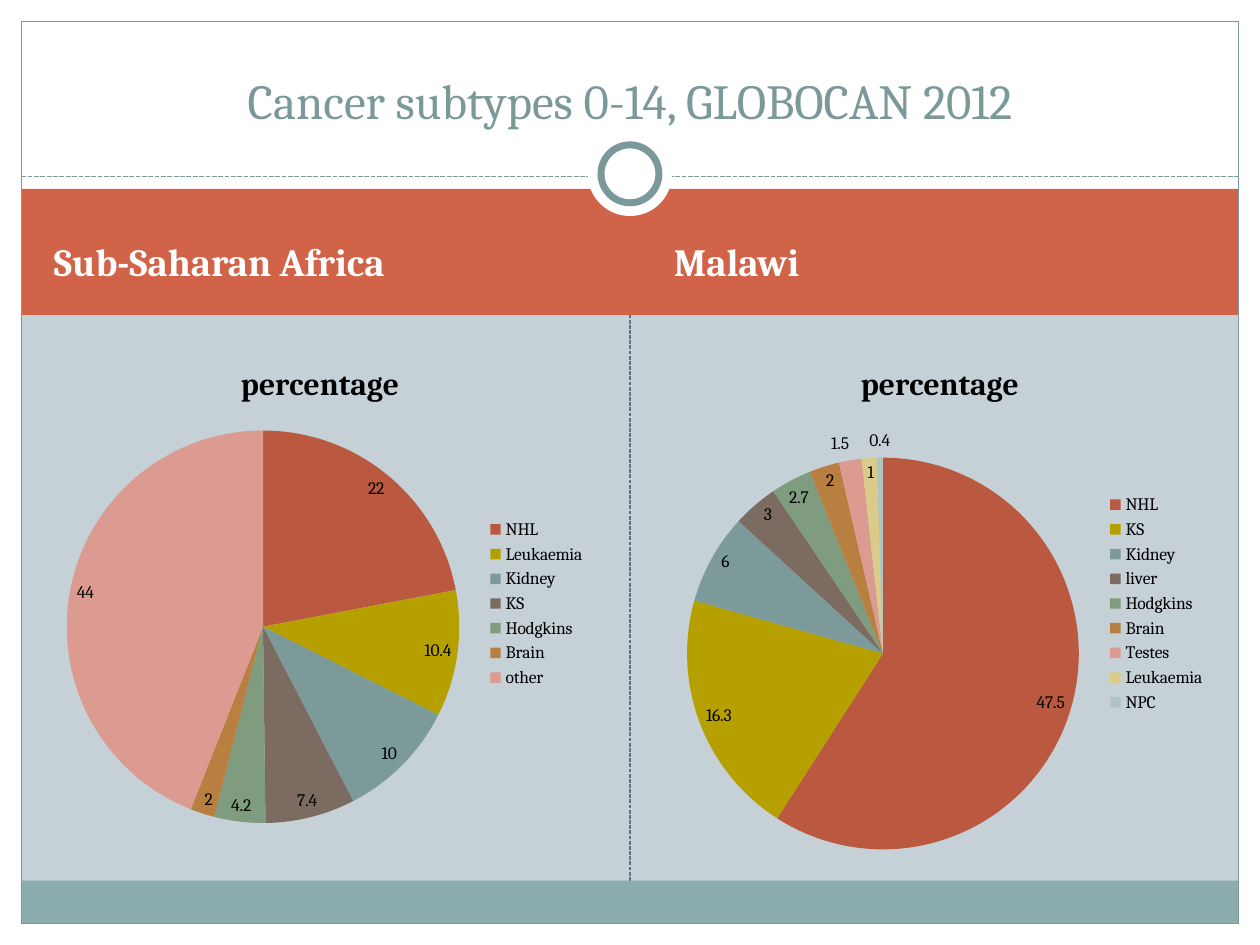
from dataclasses import dataclass
from typing import Optional

from lxml.etree import SubElement
from pptx import Presentation
from pptx.chart.data import CategoryChartData
from pptx.dml.color import RGBColor
from pptx.enum.chart import XL_CHART_TYPE, XL_LABEL_POSITION, XL_LEGEND_POSITION
from pptx.enum.dml import MSO_LINE
from pptx.enum.shapes import MSO_CONNECTOR, MSO_SHAPE
from pptx.enum.text import MSO_ANCHOR, PP_ALIGN
from pptx.oxml.ns import qn
from pptx.util import Inches, Pt


@dataclass(frozen=True)
class Theme:
    font: str = "Cambria"
    back: str = "C5D1D7"
    white: str = "FFFFFF"
    black: str = "000000"
    slate: str = "7C999A"
    band: str = "D16349"
    footer: str = "8CADAE"
    divider: str = "646B86"
    slices: tuple = ("BA5840", "B5A000", "7D9A9B", "7B6B61", "7F9C7F",
                     "B97F41", "DB9B90", "DACC88", "B0C4C6")
    title_pt: int = 28
    heading_pt: int = 22
    chart_title_pt: int = 18
    chart_pt: int = 10


@dataclass(frozen=True)
class Panel:
    heading: str
    shares: dict


T = Theme()
W, H = 10, 7.5
EDGE = 0.17                     # white frame around the slide
INNER_W, INNER_H = W - 2 * EDGE, H - 2 * EDGE
MARGIN, COL_W = 0.33, 4.42      # two text columns
COL_STEP = W - 2 * MARGIN - COL_W
BAND_TOP, BAND_H = 1.5, 1
FOOT_TOP = 6.99
RULE_Y = 1.4

PANELS = (
    Panel("Sub-Saharan Africa",
          {"NHL": 22, "Leukaemia": 10.4, "Kidney": 10, "KS": 7.4,
           "Hodgkins": 4.2, "Brain": 2, "other": 44}),
    Panel("Malawi",
          {"NHL": 47.5, "KS": 16.3, "Kidney": 6, "liver": 3, "Hodgkins": 2.7,
           "Brain": 2, "Testes": 1.5, "Leukaemia": 1, "NPC": 0.4}),
)


def rgb(color: str) -> RGBColor:
    return RGBColor.from_string(color)


def add_shape(s, box: tuple, fill: Optional[str] = None,
              line: Optional[str] = None, width: float = 0.75,
              kind=MSO_SHAPE.RECTANGLE) -> None:
    sp = s.shapes.add_shape(kind, *map(Inches, box))
    sp.shadow.inherit = False
    if fill:
        sp.fill.solid()
        sp.fill.fore_color.rgb = rgb(fill)
    else:
        sp.fill.background()
    if line:
        sp.line.color.rgb = rgb(line)
        sp.line.width = Pt(width)
    else:
        sp.line.fill.background()


def add_ring(s, center_y: float, size: float, **fmt) -> None:
    box = ((W - size) / 2, center_y - size / 2, size, size)
    add_shape(s, box, T.white, kind=MSO_SHAPE.OVAL, **fmt)


def add_dashes(s, start: tuple, end: tuple, color: str, width: float) -> None:
    ln = s.shapes.add_connector(MSO_CONNECTOR.STRAIGHT,
                                *map(Inches, start + end))
    ln.line.color.rgb = rgb(color)
    ln.line.width = Pt(width)
    ln.line.dash_style = MSO_LINE.SQUARE_DOT
    SubElement(ln._element.spPr, qn("a:effectLst"))


def set_font(font, size: float, color: str, bold: bool = False) -> None:
    font.name, font.size, font.bold = T.font, Pt(size), bold
    font.color.rgb = rgb(color)


def add_text(s, text: str, box: tuple, *, size: float, color: str,
             bold: bool = False, align=PP_ALIGN.LEFT,
             anchor=MSO_ANCHOR.MIDDLE) -> None:
    tf = s.shapes.add_textbox(*map(Inches, box)).text_frame
    tf.word_wrap = True
    tf.vertical_anchor = anchor
    p = tf.paragraphs[0]
    p.alignment = align
    r = p.add_run()
    r.text = text
    set_font(r.font, size, color, bold)


def add_pie(s, shares: dict, box: tuple) -> None:
    data = CategoryChartData()
    data.categories = list(shares)
    data.add_series("percentage", list(shares.values()))
    chart = s.shapes.add_chart(XL_CHART_TYPE.PIE, *map(Inches, box),
                               data).chart
    set_font(chart.font, T.chart_pt, T.black)

    chart.has_title = True
    p = chart.chart_title.text_frame.paragraphs[0]
    r = p.add_run()
    r.text = "percentage"
    set_font(r.font, T.chart_title_pt, T.black, bold=True)

    chart.has_legend = True
    chart.legend.position = XL_LEGEND_POSITION.RIGHT
    chart.legend.include_in_layout = False

    plot = chart.plots[0]
    plot.vary_by_categories = True
    plot.has_data_labels = True
    labels = plot.data_labels
    labels.show_value = True
    labels.position = XL_LABEL_POSITION.BEST_FIT
    for i, color in enumerate(T.slices[:len(shares)]):
        fill = plot.series[0].points[i].format.fill
        fill.solid()
        fill.fore_color.rgb = rgb(color)


def main() -> None:
    prs = Presentation()
    prs.slide_width, prs.slide_height = Inches(W), Inches(H)
    s = prs.slides.add_slide(prs.slide_layouts[6])
    s.background.fill.solid()
    s.background.fill.fore_color.rgb = rgb(T.back)

    # Column divider and white frame
    add_dashes(s, (W / 2, FOOT_TOP), (W / 2, 2.41), T.divider, 0.75)
    for box in ((0, 0, W, 1.58), (0, H - EDGE, W, EDGE),
                (0, 0, EDGE, H), (W - EDGE, 0, EDGE, H)):
        add_shape(s, box, T.white)

    # Heading band, footer, rule and outline
    add_shape(s, (EDGE, BAND_TOP, INNER_W, BAND_H), T.band)
    add_shape(s, (EDGE, FOOT_TOP, INNER_W, H - EDGE - FOOT_TOP), T.footer)
    add_dashes(s, (EDGE, RULE_Y), (W - EDGE, RULE_Y), T.slate, 0.9)
    add_shape(s, (EDGE, EDGE, INNER_W, INNER_H), line=T.slate)

    # Ring on the rule
    add_ring(s, 1.38, 0.67)
    add_ring(s, 1.38, 0.46, line=T.slate, width=4)

    # One heading and one pie per column
    for col, panel in enumerate(PANELS):
        x = MARGIN + col * COL_STEP
        add_text(s, panel.heading, (x, 1.67, COL_W, 0.8),
                 size=T.heading_pt, color=T.white, bold=True)
        add_pie(s, panel.shares, (x, 2.7, COL_W, 4.18))

    # Title
    add_text(s, "Cancer subtypes 0-14, GLOBOCAN 2012",
             (MARGIN, 0.25, W - 2 * MARGIN, 0.83), size=T.title_pt,
             color=T.slate, align=PP_ALIGN.CENTER, anchor=MSO_ANCHOR.BOTTOM)

    prs.save("out.pptx")


if __name__ == "__main__":
    main()
